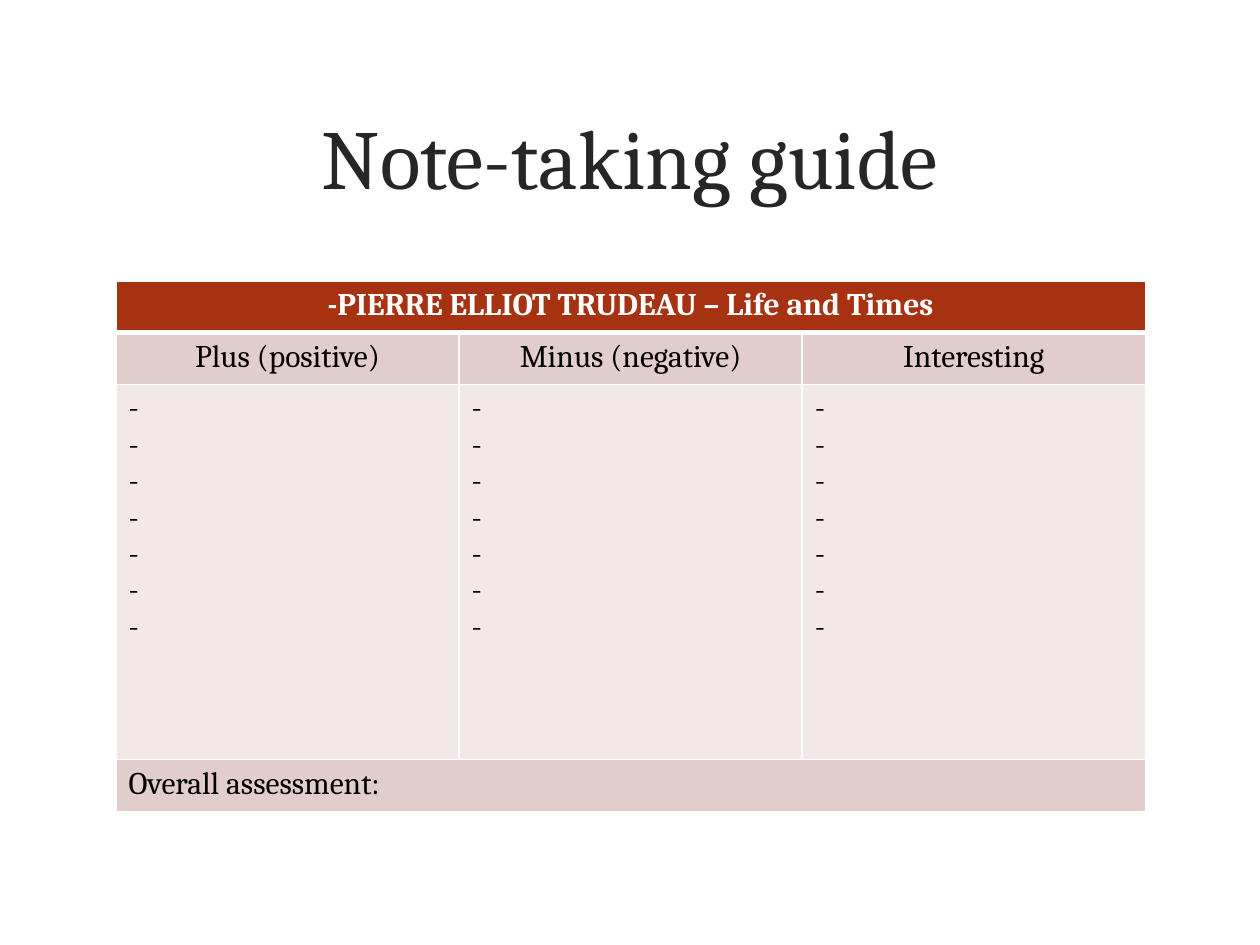
from lxml.etree import SubElement
from pptx import Presentation
from pptx.dml.color import RGBColor
from pptx.enum.text import MSO_ANCHOR, PP_ALIGN
from pptx.oxml.ns import qn
from pptx.util import Inches, Pt

WHITE = RGBColor(0xFF, 0xFF, 0xFF)
BLACK = RGBColor(0x00, 0x00, 0x00)
CHARCOAL = RGBColor(0x26, 0x26, 0x26)
RUST = RGBColor(0xA6, 0x32, 0x12)
ROSE = RGBColor(0xE1, 0xCE, 0xCC)
BLUSH = RGBColor(0xF1, 0xE8, 0xE7)


class Deck:
    font = "Cambria"

    def __init__(self, width, height):
        self.prs = Presentation()
        self.prs.slide_width, self.prs.slide_height = Inches(width), Inches(height)
        self.s = self.prs.slides.add_slide(self.prs.slide_layouts[6])

    def x(self, share):
        return int(self.prs.slide_width * share)

    def y(self, share):
        return int(self.prs.slide_height * share)

    def set_text(self, tf, text, size, color, align, bold=False):
        tf.text = text
        for p in tf.paragraphs:
            p.alignment = align
            for r in p.runs:
                r.font.name, r.font.size, r.font.bold = self.font, Pt(size), bold
                r.font.color.rgb = color

    def title(self, text, left, top, width, height):
        sp = self.s.shapes.add_textbox(
            self.x(left), self.y(top), self.x(width), self.y(height))
        tf = sp.text_frame
        tf.word_wrap = True
        tf.vertical_anchor = MSO_ANCHOR.MIDDLE
        self.set_text(tf, text, 48, CHARCOAL, PP_ALIGN.CENTER)

    def table(self, rows, columns, left, top, width, heights):
        frame = self.s.shapes.add_table(
            len(rows), columns, self.x(left), self.y(top),
            self.x(width), self.y(sum(heights)))
        table = frame.table
        for i, (texts, fill, color, align, bold) in enumerate(rows):
            table.rows[i].height = self.y(heights[i])
            for j in range(columns):
                cell = table.cell(i, j)
                self.borders(cell, 3 if i == 0 else 1, 3 if i == 1 else 1)
                cell.fill.solid()
                cell.fill.fore_color.rgb = fill
            if len(texts) == 1:
                table.cell(i, 0).merge(table.cell(i, columns - 1))
            for j, text in enumerate(texts):
                self.set_text(table.cell(i, j).text_frame, text, 18, color, align, bold)

    def borders(self, cell, bottom, top):
        tcPr = cell._tc.get_or_add_tcPr()
        for side, width in (("L", 1), ("R", 1), ("T", top), ("B", bottom)):
            ln = SubElement(tcPr, qn(f"a:ln{side}"), w=str(int(Pt(width))))
            SubElement(SubElement(ln, qn("a:solidFill")), qn("a:srgbClr"), val=str(WHITE))


def main():
    deck = Deck(10, 7.5)
    deck.title("Note-taking guide", 0.06, 0.06, 0.88, 0.21)
    dashes = "\n".join("-" * 7)
    rows = [
        (["-PIERRE ELLIOT TRUDEAU – Life and Times"], RUST, WHITE, PP_ALIGN.CENTER, True),
        (["Plus (positive)", "Minus (negative)", "Interesting"],
         ROSE, BLACK, PP_ALIGN.CENTER, False),
        ([dashes] * 3, BLUSH, BLACK, PP_ALIGN.LEFT, False),
        (["Overall assessment:"], ROSE, BLACK, PP_ALIGN.LEFT, False),
    ]
    line = 0.41 / 7.5
    deck.table(rows, 3, 0.092, 2.23 / 7.5, 0.817, [line, line, 2.98 / 7.5, line])
    deck.prs.save("out.pptx")


if __name__ == "__main__":
    main()
